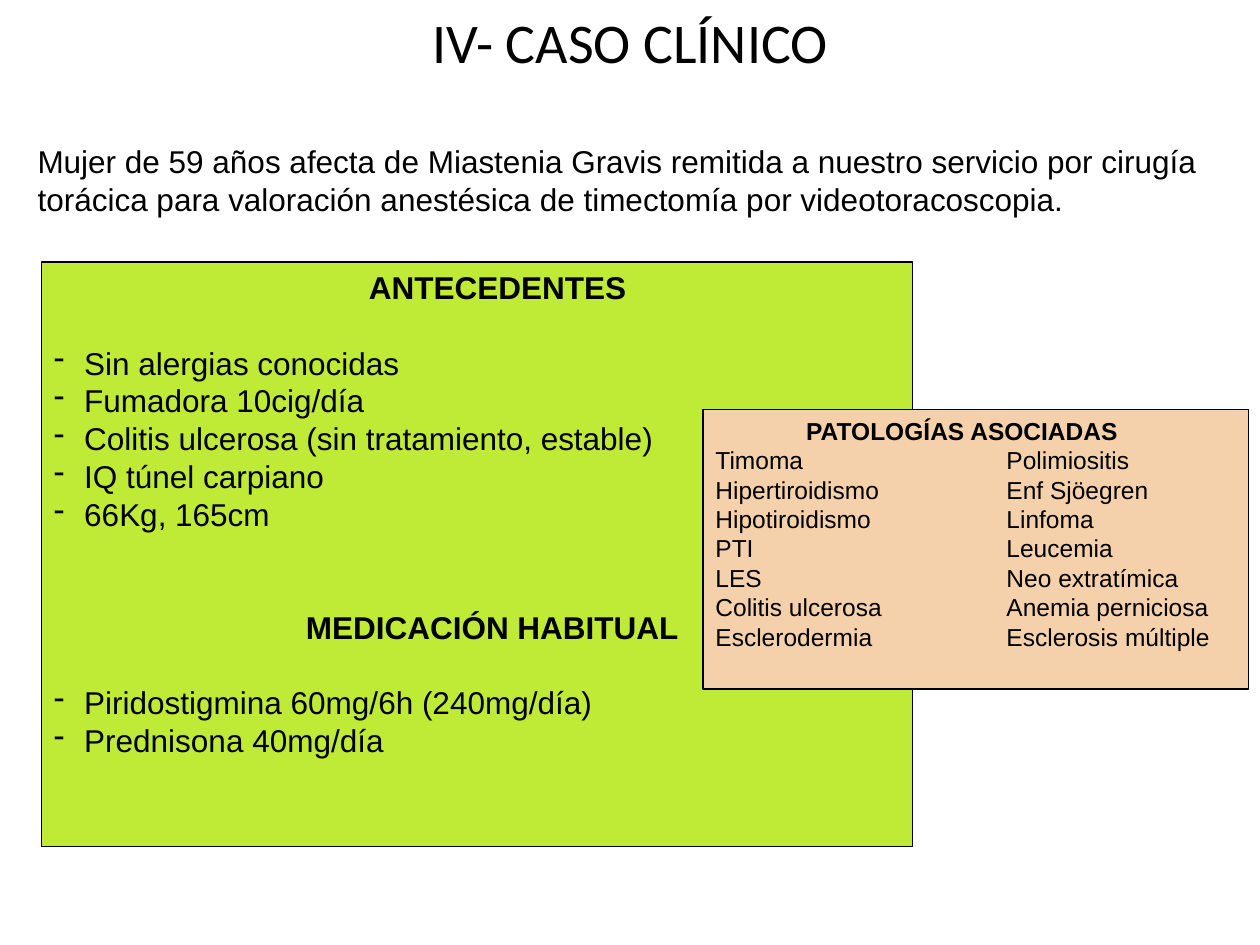
from lxml import etree
from pptx import Presentation
from pptx.dml.color import RGBColor
from pptx.enum.shapes import MSO_SHAPE
from pptx.enum.text import MSO_ANCHOR, PP_ALIGN
from pptx.oxml.ns import qn
from pptx.util import Inches, Pt

RECTANGLE = MSO_SHAPE.RECTANGLE
TOP, MIDDLE = MSO_ANCHOR.TOP, MSO_ANCHOR.MIDDLE
LEFT, CENTER = PP_ALIGN.LEFT, PP_ALIGN.CENTER
COLORS = {"text": "000000", "line": "000000", "history": "BFEA36", "conditions": "F4D1AA"}


def format_paragraph(paragraph, size, bold=False, font="Arial", align=LEFT, indent=0):
    paragraph.alignment = align
    if indent:
        paragraph._p.get_or_add_pPr().set("marL", str(Inches(indent)))
    for run in paragraph.runs:
        run.font.name = font
        run.font.size = Pt(size)
        run.font.bold = bold
        run.font.color.rgb = RGBColor.from_string(COLORS["text"])


def add_panel(left, top, width, height, fill, line_width):
    panel = slide.shapes.add_shape(
        RECTANGLE, Inches(left), Inches(top), Inches(width), Inches(height))
    panel.shadow.inherit = False
    panel.fill.solid()
    panel.fill.fore_color.rgb = RGBColor.from_string(fill)
    panel.line.color.rgb = RGBColor.from_string(COLORS["line"])
    panel.line.width = Pt(line_width)
    panel.text_frame.word_wrap = True
    panel.text_frame.vertical_anchor = TOP
    return panel.text_frame


presentation = Presentation()
presentation.slide_width = Inches(10)
presentation.slide_height = Inches(7.5)
slide = presentation.slides.add_slide(presentation.slide_layouts[5])

# Introduction
introduction = slide.shapes.add_textbox(Inches(0.2), Inches(1.08), Inches(9.47), Inches(0.71))
introduction.text_frame.word_wrap = True
introduction.text_frame.text = (
    "Mujer de 59 años afecta de Miastenia Gravis remitida a nuestro servicio por cirugía "
    "torácica para valoración anestésica de timectomía por videotoracoscopia.")
format_paragraph(introduction.text_frame.paragraphs[0], 18)

# Title
title = slide.shapes.title
title.left, title.top = Inches(0.2), Inches(0.08)
title.width, title.height = Inches(9.61), Inches(0.5)
title.text_frame.text = "IV- CASO CLÍNICO"
title.text_frame.vertical_anchor = MIDDLE
format_paragraph(title.text_frame.paragraphs[0], 32, font="Calibri", align=CENTER)

# History and medication: heading, heading indent, space before, items
sections = [
    ("ANTECEDENTES", 2.5, 0, [
        "Sin alergias conocidas",
        "Fumadora 10cig/día",
        "Colitis ulcerosa (sin tratamiento, estable)",
        "IQ túnel carpiano",
        "66Kg, 165cm",
    ]),
    ("MEDICACIÓN HABITUAL", 2, 43, [
        "Piridostigmina 60mg/6h (240mg/día)",
        "Prednisona 40mg/día",
    ]),
]
history = add_panel(0.33, 2.08, 6.91, 4.64, COLORS["history"], 0.75)
paragraph = history.paragraphs[0]
for heading, indent, space_before, items in sections:
    if paragraph.text:
        paragraph = history.add_paragraph()
    paragraph.text = heading
    paragraph.space_before = Pt(space_before)
    paragraph.space_after = Pt(21.5)
    format_paragraph(paragraph, 18, bold=True, indent=indent)
    for item in items:
        paragraph = history.add_paragraph()
        paragraph.text = item
        format_paragraph(paragraph, 18, indent=0.24)
        properties = paragraph._p.get_or_add_pPr()
        properties.set("indent", str(-Inches(0.24)))
        etree.SubElement(properties, qn("a:buChar")).set("char", "-")

# Associated conditions in two columns
conditions = [
    ("Timoma", "Polimiositis"),
    ("Hipertiroidismo", "Enf Sjöegren"),
    ("Hipotiroidismo", "Linfoma"),
    ("PTI", "Leucemia"),
    ("LES", "Neo extratímica"),
    ("Colitis ulcerosa", "Anemia perniciosa"),
    ("Esclerodermia", "Esclerosis múltiple"),
]
associated = add_panel(5.58, 3.25, 4.33, 2.22, COLORS["conditions"], 1)
associated.text = "PATOLOGÍAS ASOCIADAS"
format_paragraph(associated.paragraphs[0], 14, bold=True, indent=0.72)
for pair in conditions:
    paragraph = associated.add_paragraph()
    paragraph.text = "\t".join(pair)
    format_paragraph(paragraph, 14)
    tab_list = etree.SubElement(paragraph._p.get_or_add_pPr(), qn("a:tabLst"))
    tab = etree.SubElement(tab_list, qn("a:tab"))
    tab.set("pos", str(Inches(2.31)))
    tab.set("algn", "l")

presentation.save("out.pptx")
